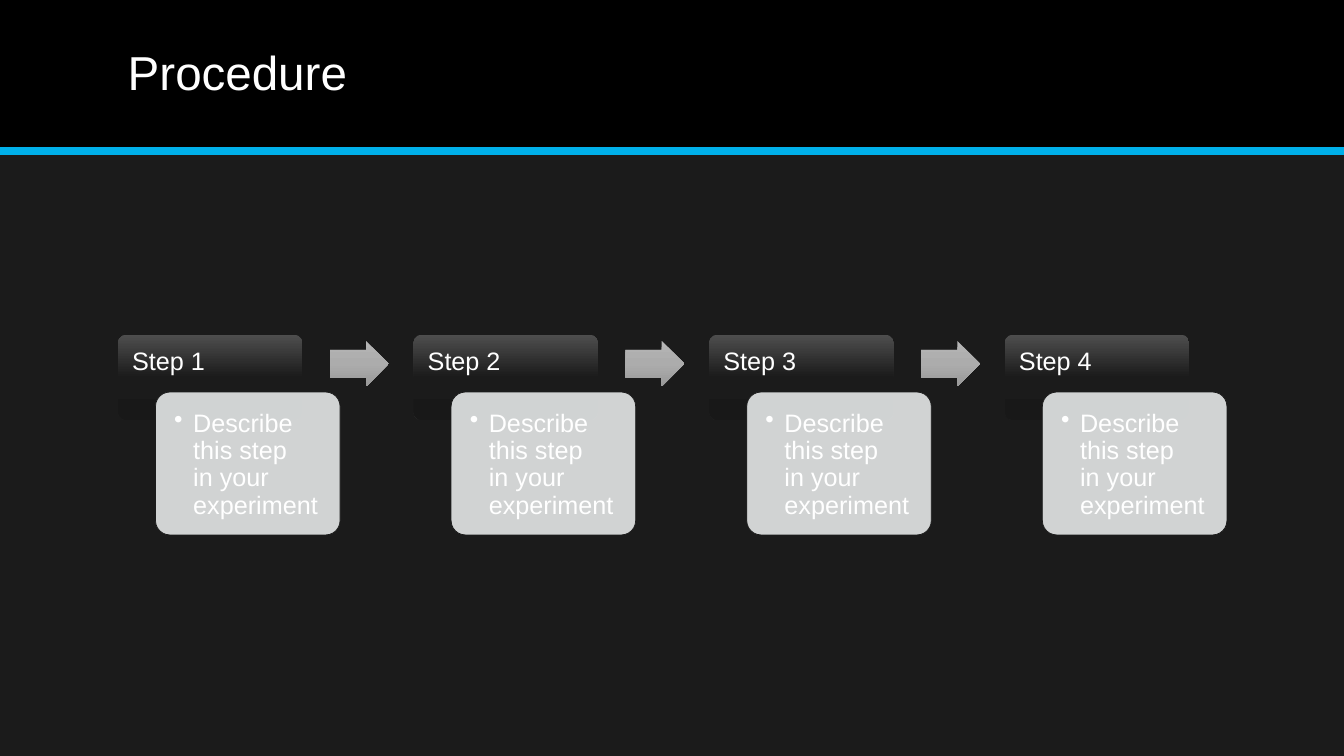
from lxml import etree
from pptx import Presentation
from pptx import util as u
from pptx.dml.color import RGBColor
from pptx.enum import shapes, text
from pptx.oxml.ns import qn

COLORS = {
    "background": "1B1B1B",
    "header": "000000",
    "accent": "00B0EA",
    "text": "FFFFFF",
    "card": "E5E8E8",
}
STEP_GRADIENT = [(0, "4E4E4E"), (50, "1B1B1B"), (100, "181818")]
ARROW_GRADIENT = [(0, "B5B5B5"), (50, "ACACAC"), (100, "999999")]

STEPS = ["Step 1", "Step 2", "Step 3", "Step 4"]
DESCRIPTION = "Describe this step\nin your experiment"

# Step geometry in centimetres
LEFT, PITCH, WIDTH = 2.97, 7.45, 4.65
STEP_TOP, CARD_TOP = 8.43, 9.88


def rgb(name):
    return RGBColor.from_string(COLORS[name])


def add_box(slide, kind, box, adjustments=()):
    sp = slide.shapes.add_shape(kind, *map(u.Cm, box))
    sp.shadow.inherit = False
    sp.line.fill.background()
    for i, value in enumerate(adjustments):
        sp.adjustments[i] = value
    return sp


def fill_solid(sp, color, opacity=100):
    sp.fill.solid()
    sp.fill.fore_color.rgb = rgb(color)
    if opacity < 100:
        clr = sp._element.spPr.find(qn("a:solidFill"))[0]
        etree.SubElement(clr, qn("a:alpha"), val=str(opacity * 1000))


def fill_gradient(sp, stops):
    """Fill from top to bottom with any number of stops."""
    sp.fill.gradient()
    sp.fill.gradient_angle = 270
    gs_lst = sp._element.spPr.find(qn("a:gradFill")).find(qn("a:gsLst"))
    for gs in list(gs_lst):
        gs_lst.remove(gs)
    for position, color in stops:
        gs = etree.SubElement(gs_lst, qn("a:gs"), pos=str(position * 1000))
        etree.SubElement(gs, qn("a:srgbClr"), val=color)


def add_text(slide, box, content, size, insets, anchor=text.MSO_ANCHOR.TOP):
    tf = slide.shapes.add_textbox(*map(u.Cm, box)).text_frame
    tf.word_wrap = True
    tf.vertical_anchor = anchor
    (tf.margin_left, tf.margin_top,
     tf.margin_right, tf.margin_bottom) = map(u.Cm, insets)
    p = tf.paragraphs[0]
    p.text = content
    p.line_spacing = 0.9
    p.font.name = "Arial"
    p.font.size = u.Pt(size)
    p.font.color.rgb = rgb("text")
    return p


def add_bullet(p, indent):
    pPr = p._p.get_or_add_pPr()
    pPr.set("marL", str(u.Cm(indent)))
    pPr.set("indent", str(-u.Cm(indent)))
    bullet = etree.Element(qn("a:buChar"), char="•")
    pPr.find(qn("a:lnSpc")).addnext(bullet)


def add_header(prs, slide, title):
    width = prs.slide_width.cm
    band = add_box(slide, shapes.MSO_SHAPE.RECTANGLE, (0, 0, width, 3.81))
    fill_solid(band, "header")
    rule = slide.shapes.add_connector(
        shapes.MSO_CONNECTOR.STRAIGHT, 0, u.Cm(3.81), prs.slide_width, u.Cm(3.81))
    rule.line.color.rgb = rgb("accent")
    rule.line.width = u.Pt(6)
    etree.SubElement(rule._element.spPr, qn("a:effectLst"))
    add_text(slide, (LEFT, 0.36, 27.94, 3.05), title, 34,
             (0.25, 0.13, 0.25, 0.13), text.MSO_ANCHOR.MIDDLE)


def add_step(slide, x, label):
    rounded = shapes.MSO_SHAPE.ROUNDED_RECTANGLE
    tab = add_box(slide, rounded, (x, STEP_TOP, WIDTH, 2.16), [0.1])
    fill_gradient(tab, STEP_GRADIENT)
    add_text(slide, (x, STEP_TOP, WIDTH, 1.45), label, 18,
             (0.36, 0.36, 0.36, 0.18))

    card_x = x + 0.95
    card = add_box(slide, rounded, (card_x, CARD_TOP, WIDTH, 3.6), [0.1])
    fill_solid(card, "card", opacity=90)
    card.line.color.rgb = rgb("background")
    card.line.width = u.Pt(0.5)
    p = add_text(slide, (card_x + 0.11, CARD_TOP + 0.11, WIDTH - 0.22, 3.38),
                 DESCRIPTION, 18, (0.36, 0.36, 0.36, 0.36))
    add_bullet(p, 0.48)


def add_arrow(slide, x):
    arrow = add_box(slide, shapes.MSO_SHAPE.RIGHT_ARROW,
                    (x, 8.59, 1.49, 1.15), [0.6, 0.5])
    fill_gradient(arrow, ARROW_GRADIENT)


def main():
    prs = Presentation()
    prs.slide_width, prs.slide_height = u.Cm(33.87), u.Cm(19.05)
    slide = prs.slides.add_slide(prs.slide_layouts[6])
    slide.background.fill.solid()
    slide.background.fill.fore_color.rgb = rgb("background")

    # Title band
    add_header(prs, slide, "Procedure")

    # Steps with an arrow between neighbours
    for i, label in enumerate(STEPS):
        x = LEFT + i * PITCH
        add_step(slide, x, label)
        if i < len(STEPS) - 1:
            add_arrow(slide, x + 5.34)

    prs.save("out.pptx")


if __name__ == "__main__":
    main()
